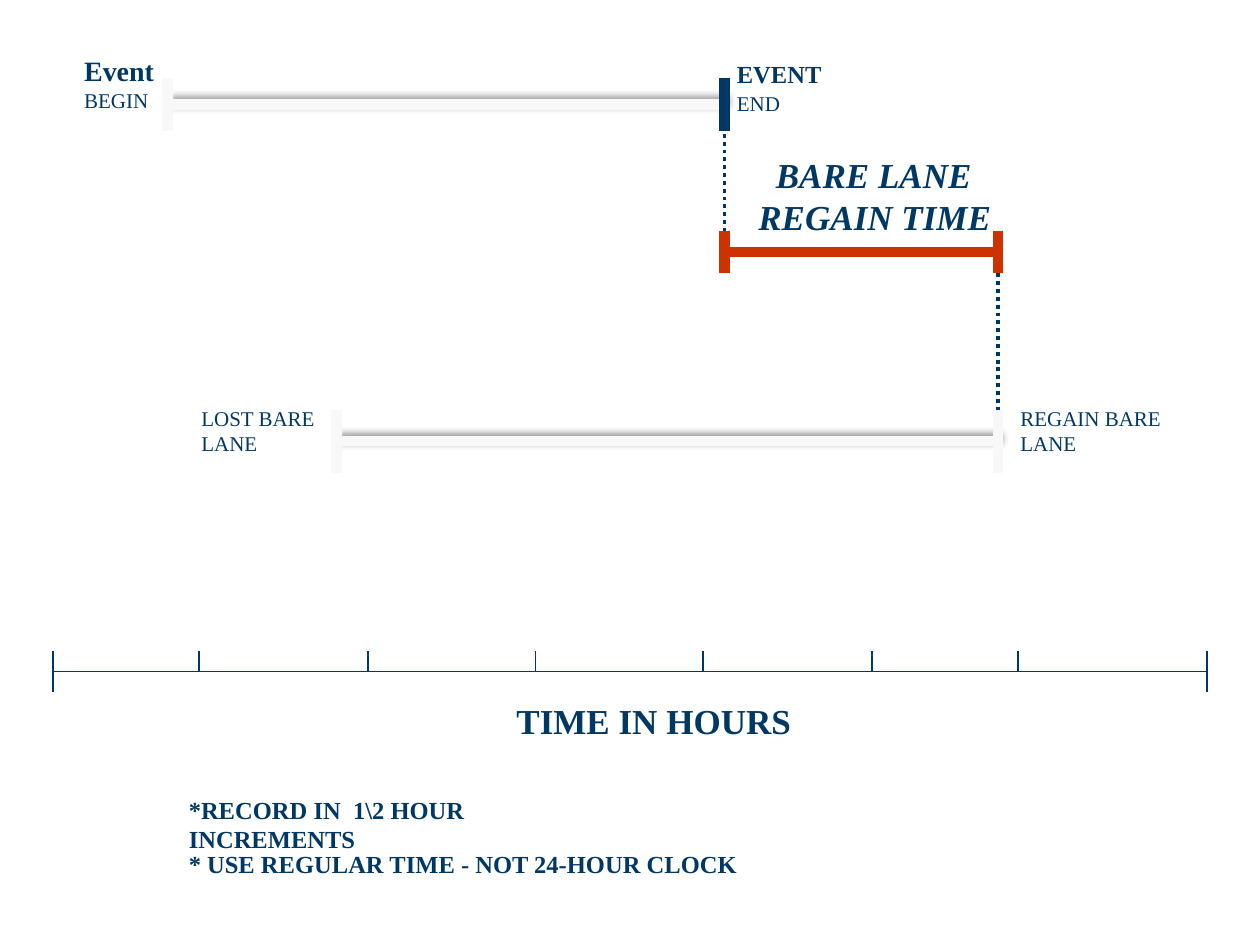
from dataclasses import dataclass

import lxml.etree
import pptx
import pptx.dml.color
import pptx.enum.dml
import pptx.enum.shapes
import pptx.enum.text
import pptx.oxml.ns
import pptx.util

Inches = pptx.util.Inches
Pt = pptx.util.Pt


@dataclass(frozen=True)
class Theme:
    font: str = "Times New Roman"
    navy: str = "003865"
    pale: str = "F8F8F8"
    red: str = "CC3300"
    label: int = 12
    note: int = 14
    event: int = 16
    heading: int = 20
    note_end: int = 24
    thin: float = 0.75
    dotted: float = 2.25
    bar: float = 6


@dataclass(frozen=True)
class Span:
    text: str
    size: int
    bold: bool = False
    italic: bool = False


@dataclass(frozen=True)
class TimeBar:
    """A horizontal period with a vertical cap at each end."""
    start: float
    end: float
    y: float
    half_cap: float
    colour: str
    end_colour: str
    shadow: bool


THEME = Theme()
EVENT_END, REGAIN = 5.75, 7.92
EVENT_Y, REGAIN_Y, LOST_Y = 0.83, 2, 3.5

BARS = [
    TimeBar(1.33, EVENT_END, EVENT_Y, 0.21, THEME.pale, THEME.navy, True),
    TimeBar(2.67, REGAIN, LOST_Y, 0.25, THEME.pale, THEME.pale, True),
    TimeBar(EVENT_END, REGAIN, REGAIN_Y, 0.17, THEME.red, THEME.red, False),
]
AXIS_START, AXIS_END, AXIS_Y, TICK = 0.42, 9.58, 5.33, 0.16
HOURS = [1.58, 2.92, 4.25, 5.58, 6.92, 8.08]


def add_effects(line, shadow: bool) -> None:
    """Replace the theme shadow by none, or by a soft one to the upper right."""
    qn = pptx.oxml.ns.qn
    effects = lxml.etree.SubElement(line._element.spPr, qn("a:effectLst"))
    if shadow:
        outer = lxml.etree.SubElement(
            effects, qn("a:outerShdw"), blurRad=str(Pt(4)), dist=str(Pt(3)),
            dir=str(315 * 60000), algn="ctr", rotWithShape="0")
        colour = lxml.etree.SubElement(outer, qn("a:srgbClr"), val="000000")
        lxml.etree.SubElement(colour, qn("a:alpha"), val="40000")


def add_line(page, x1: float, y1: float, x2: float, y2: float, *,
             colour: str = THEME.navy, width: float = THEME.thin,
             dotted: bool = False, shadow: bool = False) -> None:
    line = page.shapes.add_connector(
        pptx.enum.shapes.MSO_CONNECTOR.STRAIGHT,
        Inches(x1), Inches(y1), Inches(x2), Inches(y2))
    line.line.color.rgb = pptx.dml.color.RGBColor.from_string(colour)
    line.line.width = Pt(width)
    if dotted:
        line.line.dash_style = pptx.enum.dml.MSO_LINE.ROUND_DOT
    add_effects(line, shadow)


def add_bar(page, bar: TimeBar) -> None:
    add_line(page, bar.start, bar.y, bar.end, bar.y, colour=bar.colour,
             width=THEME.bar, shadow=bar.shadow)
    for x, colour in ((bar.start, bar.colour), (bar.end, bar.end_colour)):
        add_line(page, x, bar.y - bar.half_cap, x, bar.y + bar.half_cap,
                 colour=colour, width=THEME.bar)


def add_axis(page) -> None:
    add_line(page, AXIS_START, AXIS_Y, AXIS_END, AXIS_Y)
    for x in (AXIS_START, AXIS_END):
        add_line(page, x, AXIS_Y - TICK, x, AXIS_Y + TICK)
    for x in HOURS:
        add_line(page, x, AXIS_Y, x, AXIS_Y - TICK)


def add_text(page, left: float, top: float, width: float, height: float,
             *paras: list[Span], wrap: bool = False) -> None:
    box = page.shapes.add_textbox(
        Inches(left), Inches(top), Inches(width), Inches(height))
    frame = box.text_frame
    frame.word_wrap = wrap
    frame.auto_size = pptx.enum.text.MSO_AUTO_SIZE.SHAPE_TO_FIT_TEXT
    for index, spans in enumerate(paras):
        para = frame.add_paragraph() if index else frame.paragraphs[0]
        for span in spans:
            run = para.add_run()
            run.text = span.text
            run.font.name = THEME.font
            run.font.size = Pt(span.size)
            run.font.bold = span.bold
            run.font.italic = span.italic
            run.font.color.rgb = pptx.dml.color.RGBColor.from_string(THEME.navy)


def add_labels(page) -> None:
    add_text(page, 0.57, 0.38, 0.76, 0.57,
             [Span("Event", THEME.event, bold=True)],
             [Span("BEGIN", THEME.label)])
    add_text(page, EVENT_END, 0.42, 0.87, 0.33,
             [Span("EVENT", THEME.note, bold=True)], wrap=True)
    add_text(page, EVENT_END, 0.67, 0.54, 0.3, [Span("END", THEME.label)])
    add_text(page, 5.92, 1.17, 2.25, 0.77,
             [Span("  BARE LANE REGAIN TIME", THEME.heading,
                   bold=True, italic=True)], wrap=True)
    for left, width, verb in ((1.5, 1.1, "LOST"), (8, 1.32, "REGAIN")):
        add_text(page, left, 3.17, width, 0.5,
                 [Span(f"{verb} BARE", THEME.label)],
                 [Span("LANE", THEME.label)], wrap=True)
    add_text(page, 4, 5.5, 2.38, 0.43,
             [Span("TIME IN HOURS", THEME.heading, bold=True)])
    add_text(page, 1.4, 6.26, 3.5, 0.33,
             [Span("*RECORD IN  1\\2 HOUR INCREMENTS", THEME.note, bold=True)],
             wrap=True)
    add_text(page, 1.4, 6.55, 4.67, 0.5,
             [Span("* USE REGULAR TIME - NOT 24-HOUR CLOCK", THEME.note,
                   bold=True),
              Span(" ", THEME.note_end)])


def main() -> None:
    deck = pptx.Presentation()
    deck.slide_width, deck.slide_height = Inches(10), Inches(7.5)
    page = deck.slides.add_slide(deck.slide_layouts[6])
    for bar in BARS:
        add_bar(page, bar)
    add_axis(page)
    add_labels(page)
    for x, top, bottom in ((EVENT_END, 1, 1.83), (REGAIN, 2.17, 3.25)):
        add_line(page, x, top, x, bottom, width=THEME.dotted, dotted=True)
    deck.save("out.pptx")


if __name__ == "__main__":
    main()
